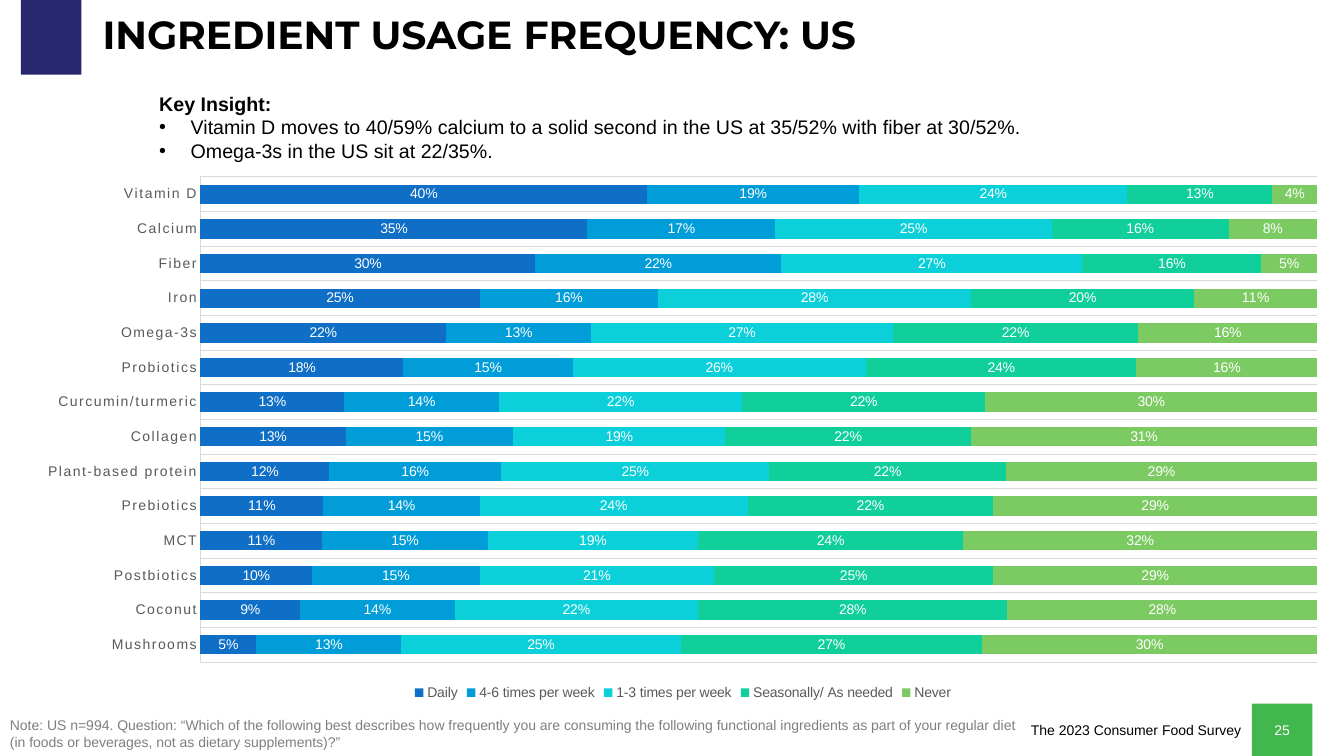
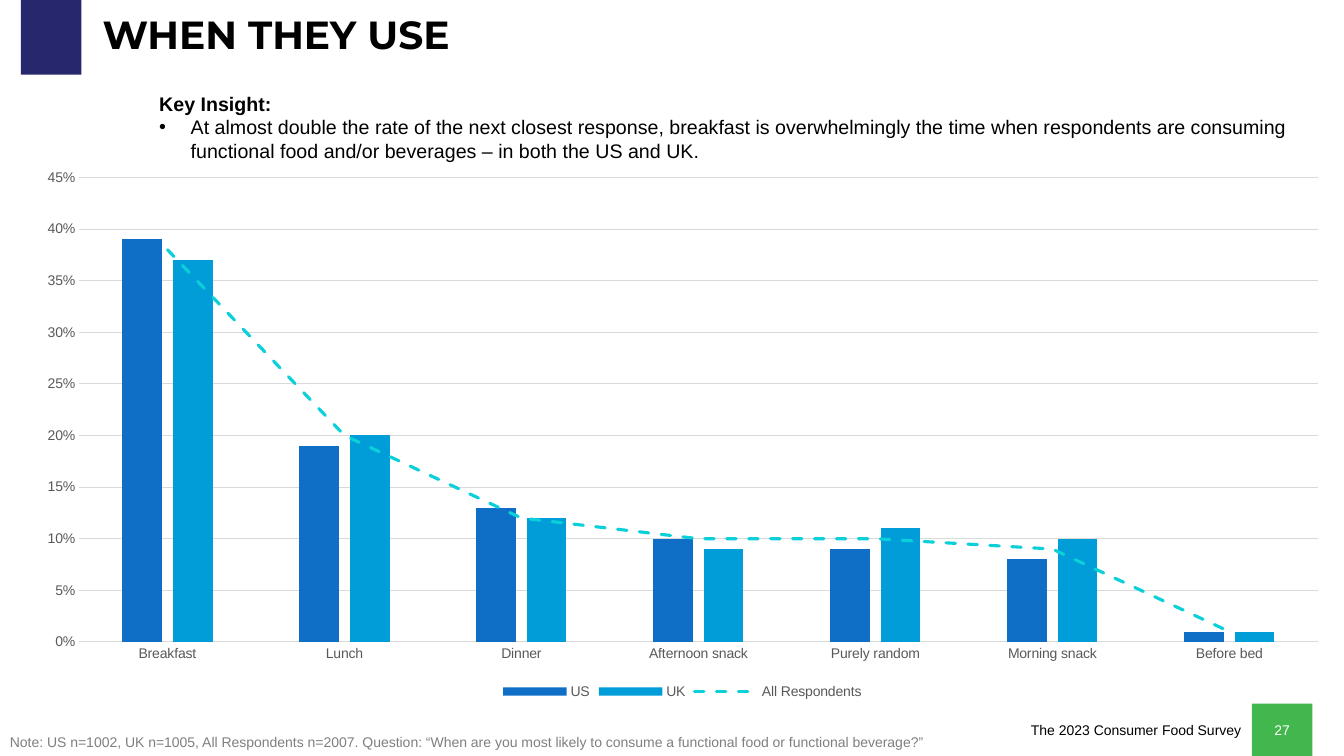
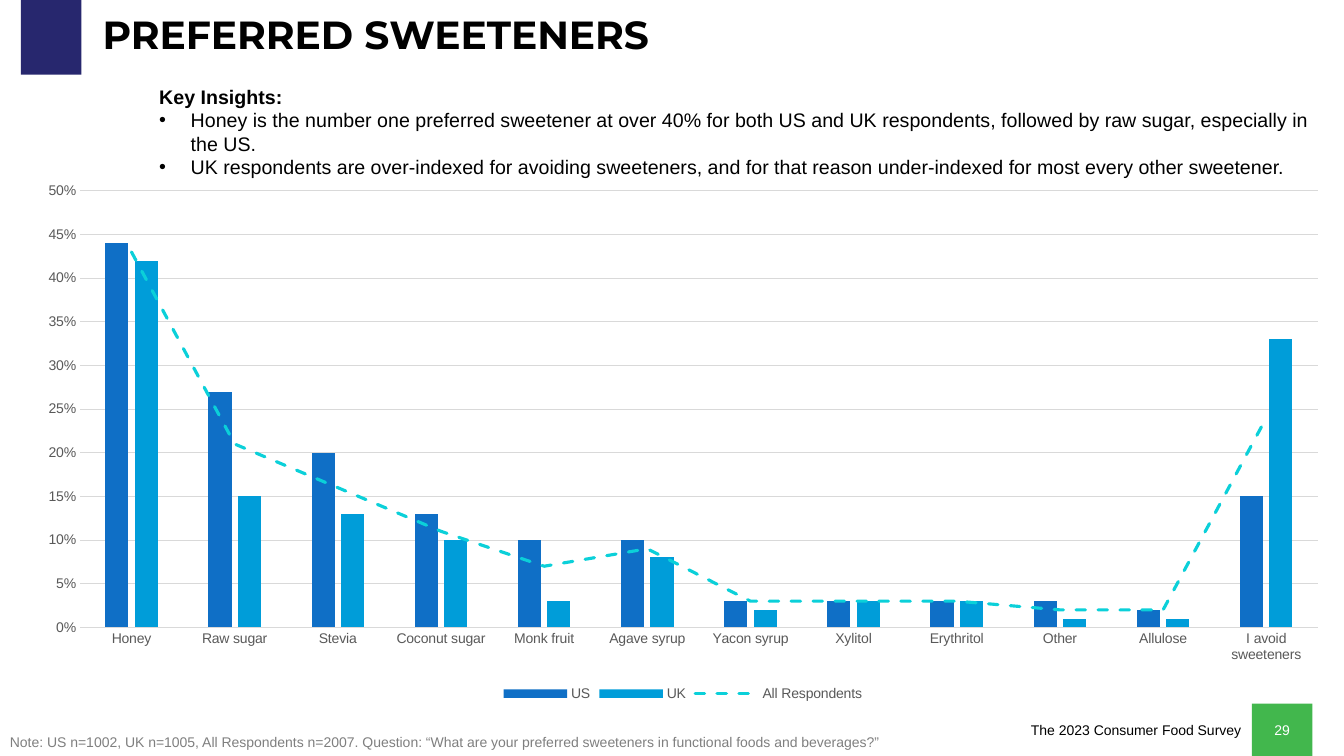
from collections import namedtuple
from dataclasses import dataclass

from lxml import etree
from pptx import Presentation
from pptx import util as u
from pptx.chart import data as chart_data
from pptx.dml import color
from pptx.enum import chart as charts
from pptx.enum import dml, shapes, text
from pptx.oxml import ns, parse_xml

Box = namedtuple("Box", "left top width height")


@dataclass(frozen=True)
class Theme:
    body_font: str = "Arial"
    title_font: str = "Montserrat"
    title_size: int = 28
    insight_size: int = 14
    small_size: int = 10
    ink: str = "000000"
    paper: str = "FFFFFF"
    note: str = "7F7F7F"
    axis_text: str = "595959"
    grid: str = "D9D9D9"
    navy: str = "27276E"
    green: str = "42B74D"
    series: tuple = ("0F6FC6", "009DD9", "0BD0D9", "10CF9B", "7CCA62")


THEME = Theme()
SLIDE = Box(0, 0, 960, 540)
TITLE_BAND = Box(15, -3.6, 879.2, 56.9)
FOOTER = Box(0, 502.6, 937.4, 37.4)
SURVEY = "The 2023 Consumer Food Survey"
COUNTRIES = ("US", "UK", "All Respondents")


def rgb(value):
    return color.RGBColor.from_string(value)


def place(box):
    return [u.Pt(round(length, 2)) for length in box]


def style_font(font, size=THEME.small_size, ink=THEME.ink, bold=False, face=THEME.body_font):
    font.name = face
    font.size = u.Pt(size)
    font.bold = bold
    font.color.rgb = rgb(ink)


def write(frame, content, new=False, bullet=False, align=text.PP_ALIGN.LEFT, spacing=None, **style):
    paragraph = frame.add_paragraph() if new else frame.paragraphs[0]
    paragraph.alignment = align
    if spacing:
        paragraph.line_spacing = spacing
    if bullet:
        properties = paragraph._p.get_or_add_pPr()
        properties.set("marL", str(u.Pt(22.5)))
        properties.set("indent", str(u.Pt(-22.5)))
        etree.SubElement(properties, ns.qn("a:buFont")).set("typeface", THEME.body_font)
        etree.SubElement(properties, ns.qn("a:buChar")).set("char", "•")
    run = paragraph.add_run()
    run.text = content
    style_font(run.font, **style)


def add_text_frame(slide, box, anchor=text.MSO_ANCHOR.TOP):
    frame = slide.shapes.add_textbox(*place(box)).text_frame
    frame.word_wrap = True
    frame.vertical_anchor = anchor
    return frame


def add_block(slide, box, fill):
    block = slide.shapes.add_shape(shapes.MSO_SHAPE.RECTANGLE, *place(box))
    block.shadow.inherit = False
    block.fill.solid()
    block.fill.fore_color.rgb = rgb(fill)
    block.line.fill.background()
    return block


def add_title_band(slide, box, title):
    add_block(slide, Box(box.left, box.top, 43.2, box.height), THEME.navy)
    title_box = Box(box.left + 51.2, box.top + 11.6, box.width - 51.2, 36)
    write(add_text_frame(slide, title_box, text.MSO_ANCHOR.MIDDLE), title, spacing=0.9,
          size=THEME.title_size, bold=True, face=THEME.title_font)


def add_footer(slide, box, page, note, note_lines):
    page_left = box.left + box.width - 43.2
    survey = add_text_frame(slide, Box(page_left - 324, box.top + 9.3, 323.3, 19.4))
    write(survey, SURVEY, align=text.PP_ALIGN.RIGHT)
    page_block = add_block(slide, Box(page_left, box.top, 43.2, box.height), THEME.green)
    page_block.text_frame.vertical_anchor = text.MSO_ANCHOR.MIDDLE
    write(page_block.text_frame, str(page), align=text.PP_ALIGN.CENTER, ink=THEME.paper)
    note_height = 7.2 + 12.2 * note_lines
    note_box = Box(box.left, box.top + box.height - note_height, 737.3, note_height)
    write(add_text_frame(slide, note_box), note, ink=THEME.note)


def add_insights(slide, box, heading, insights):
    frame = add_text_frame(slide, box)
    write(frame, heading, size=THEME.insight_size, bold=True)
    for insight in insights:
        write(frame, insight, new=True, bullet=True, size=THEME.insight_size)


def set_plot_box(chart, box, plot):
    area = chart._chartSpace.find(".//" + ns.qn("c:plotArea"))
    for old in area.findall(ns.qn("c:layout")):
        area.remove(old)
    layout = etree.Element(ns.qn("c:layout"))
    manual = etree.SubElement(layout, ns.qn("c:manualLayout"))
    settings = {
        "layoutTarget": "inner", "xMode": "edge", "yMode": "edge",
        "x": (plot.left - box.left) / box.width,
        "y": (plot.top - box.top) / box.height,
        "w": plot.width / box.width,
        "h": plot.height / box.height,
    }
    for tag, value in settings.items():
        etree.SubElement(manual, ns.qn("c:" + tag)).set("val", str(value))
    area.insert(0, layout)


def style_grid(axis):
    axis.has_major_gridlines = True
    axis.major_gridlines.format.line.color.rgb = rgb(THEME.grid)
    axis.major_gridlines.format.line.width = u.Pt(0.75)


def add_survey_chart(slide, box, plot, kind, categories, answers):
    table = chart_data.CategoryChartData(number_format="0%")
    table.categories = categories
    for name, shares in answers:
        table.add_series(name, [share / 100 for share in shares])
    chart = slide.shapes.add_chart(kind, *place(box), table).chart
    chart._chartSpace.chart.addnext(parse_xml(
        f'<c:spPr {ns.nsdecls("c", "a")}><a:noFill/><a:ln><a:noFill/></a:ln></c:spPr>'))
    style_font(chart.font)
    chart.has_title = False
    chart.has_legend = True
    chart.legend.position = charts.XL_LEGEND_POSITION.BOTTOM
    chart.legend.include_in_layout = False
    style_font(chart.legend.font, ink=THEME.axis_text)
    set_plot_box(chart, box, plot)

    for axis in (chart.category_axis, chart.value_axis):
        axis.major_tick_mark = axis.minor_tick_mark = charts.XL_TICK_MARK.NONE
        style_font(axis.tick_labels.font, ink=THEME.axis_text)
    chart.category_axis.format.line.color.rgb = rgb(THEME.grid)
    chart.category_axis.format.line.width = u.Pt(0.75)
    chart.value_axis.minimum_scale = 0
    chart.value_axis.has_major_gridlines = False
    chart.value_axis.format.line.fill.background()
    chart.value_axis.tick_labels.number_format = "0%"
    chart.value_axis.tick_labels.number_format_is_linked = False

    bars = chart.plots[0]
    bars.vary_by_categories = False
    for series, fill in zip(bars.series, THEME.series):
        series.format.fill.solid()
        series.format.fill.fore_color.rgb = rgb(fill)
        series.invert_if_negative = False
    return chart


def add_frequency_chart(slide, box, plot, categories, answers):
    chart = add_survey_chart(slide, box, plot, charts.XL_CHART_TYPE.BAR_STACKED_100,
                             categories, answers)
    chart.value_axis.visible = False
    chart.value_axis.maximum_scale = 1
    style_grid(chart.category_axis)
    chart.category_axis._element.find(".//" + ns.qn("a:defRPr")).set("spc", "120")
    bars = chart.plots[0]
    bars.gap_width = 79
    bars.overlap = 100
    for series in bars.series:
        labels = series.data_labels
        labels.show_value = True
        labels.number_format = "0%"
        labels.number_format_is_linked = False
        labels.position = charts.XL_LABEL_POSITION.CENTER
        style_font(labels.font, ink=THEME.paper)


def turn_last_series_into_line(chart):
    bars = chart._chartSpace.find(".//" + ns.qn("c:barChart"))
    average = bars.findall(ns.qn("c:ser"))[-1]
    for tag in ("c:spPr", "c:invertIfNegative"):
        for part in average.findall(ns.qn(tag)):
            average.remove(part)
    axis_ids = [axis.get("val") for axis in bars.findall(ns.qn("c:axId"))]
    line_plot = parse_xml(
        f'<c:lineChart {ns.nsdecls("c")}><c:grouping val="standard"/><c:varyColors val="0"/>'
        f'<c:marker val="1"/><c:axId val="{axis_ids[0]}"/><c:axId val="{axis_ids[1]}"/>'
        '</c:lineChart>')
    line_plot.insert(2, average)
    bars.addnext(line_plot)

    series = chart.plots[1].series[0]
    series.smooth = False
    series.marker.style = charts.XL_MARKER_STYLE.NONE
    series.format.line.color.rgb = rgb(THEME.series[2])
    series.format.line.width = u.Pt(2.25)
    series.format.line.dash_style = dml.MSO_LINE.DASH
    average.find(".//" + ns.qn("a:ln")).set("cap", "rnd")


def add_country_chart(slide, box, plot, categories, answers, top_share):
    chart = add_survey_chart(slide, box, plot, charts.XL_CHART_TYPE.COLUMN_CLUSTERED,
                             categories, answers)
    chart.value_axis.maximum_scale = top_share
    chart.value_axis.major_unit = 0.05
    style_grid(chart.value_axis)
    chart.plots[0].gap_width = 219
    chart.plots[0].overlap = -27
    turn_last_series_into_line(chart)


def add_survey_slide(deck, page, title, heading, insights, insights_box, note, note_lines=1):
    slide = deck.slides.add_slide(deck.slide_layouts[6])
    add_title_band(slide, TITLE_BAND, title)
    add_footer(slide, FOOTER, page, note, note_lines)
    add_insights(slide, insights_box, heading, insights)
    return slide


def main():
    deck = Presentation()
    deck.slide_width, deck.slide_height = u.Pt(SLIDE.width), u.Pt(SLIDE.height)

    frequency = add_survey_slide(
        deck, 25, "INGREDIENT USAGE FREQUENCY: US", "Key Insight:",
        ["Vitamin D moves to 40/59% calcium to a solid second in the US at 35/52% with fiber at 30/52%.",
         "Omega-3s in the US sit at 22/35%."],
        Box(106.6, 61.9, 843.8, 108.7),
        "Note: US n=994. Question: “Which of the following best describes how frequently you are "
        "consuming the following functional ingredients as part of your regular diet (in foods or "
        "beverages, not as dietary supplements)?”", note_lines=2)
    add_frequency_chart(
        frequency, Box(15.8, 118.8, 944.2, 384.5), Box(143.2, 126.4, 797.6, 346.6),
        ["Mushrooms", "Coconut", "Postbiotics", "MCT", "Prebiotics", "Plant-based protein",
         "Collagen", "Curcumin/turmeric", "Probiotics", "Omega-3s", "Iron", "Fiber",
         "Calcium", "Vitamin D"],
        [("Daily", [5, 9, 10, 11, 11, 12, 13, 13, 18, 22, 25, 30, 35, 40]),
         ("4-6 times per week", [13, 14, 15, 15, 14, 16, 15, 14, 15, 13, 16, 22, 17, 19]),
         ("1-3 times per week", [25, 22, 21, 19, 24, 25, 19, 22, 26, 27, 28, 27, 25, 24]),
         ("Seasonally/ As needed", [27, 28, 25, 24, 22, 22, 22, 22, 24, 22, 20, 16, 16, 13]),
         ("Never", [30, 28, 29, 32, 29, 29, 31, 30, 16, 16, 11, 5, 8, 4])])

    occasions = add_survey_slide(
        deck, 27, "WHEN THEY USE", "Key Insight:",
        ["At almost double the rate of the next closest response, breakfast is overwhelmingly the "
         "time when respondents are consuming functional food and/or beverages – in both the US and UK."],
        Box(106.6, 61.9, 843.8, 108.7),
        "Note: US n=1002, UK n=1005, All Respondents n=2007. Question: “When are you most likely "
        "to consume a functional food or functional beverage?”")
    add_country_chart(
        occasions, Box(15.1, 113, 944.6, 389.5), Box(56.4, 126.8, 885, 331.8),
        ["Breakfast", "Lunch", "Dinner", "Afternoon snack", "Purely random", "Morning snack",
         "Before bed"],
        list(zip(COUNTRIES, [[39, 19, 13, 10, 9, 8, 1],
                             [37, 20, 12, 9, 11, 10, 1],
                             [38, 20, 12, 10, 10, 9, 1]])),
        top_share=0.45)

    sweeteners = add_survey_slide(
        deck, 29, "PREFERRED SWEETENERS", "Key Insights:",
        ["Honey is the number one preferred sweetener at over 40% for both US and UK respondents, "
         "followed by raw sugar, especially in the US.",
         "UK respondents are over-indexed for avoiding sweeteners, and for that reason "
         "under-indexed for most every other sweetener."],
        Box(106.6, 56.9, 843.8, 126),
        "Note: US n=1002, UK n=1005, All Respondents n=2007. Question: “What are your preferred "
        "sweeteners in functional foods and beverages?”")
    add_country_chart(
        sweeteners, Box(15.8, 123.8, 944, 380.2), Box(57.1, 136.4, 884.3, 311.8),
        ["Honey", "Raw sugar", "Stevia", "Coconut sugar", "Monk fruit", "Agave syrup",
         "Yacon syrup", "Xylitol", "Erythritol", "Other", "Allulose", "I avoid sweeteners"],
        list(zip(COUNTRIES, [[44, 27, 20, 13, 10, 10, 3, 3, 3, 3, 2, 15],
                             [42, 15, 13, 10, 3, 8, 2, 3, 3, 1, 1, 33],
                             [43, 21, 16, 11, 7, 9, 3, 3, 3, 2, 2, 24]])),
        top_share=0.5)

    deck.save("out.pptx")


if __name__ == "__main__":
    main()
